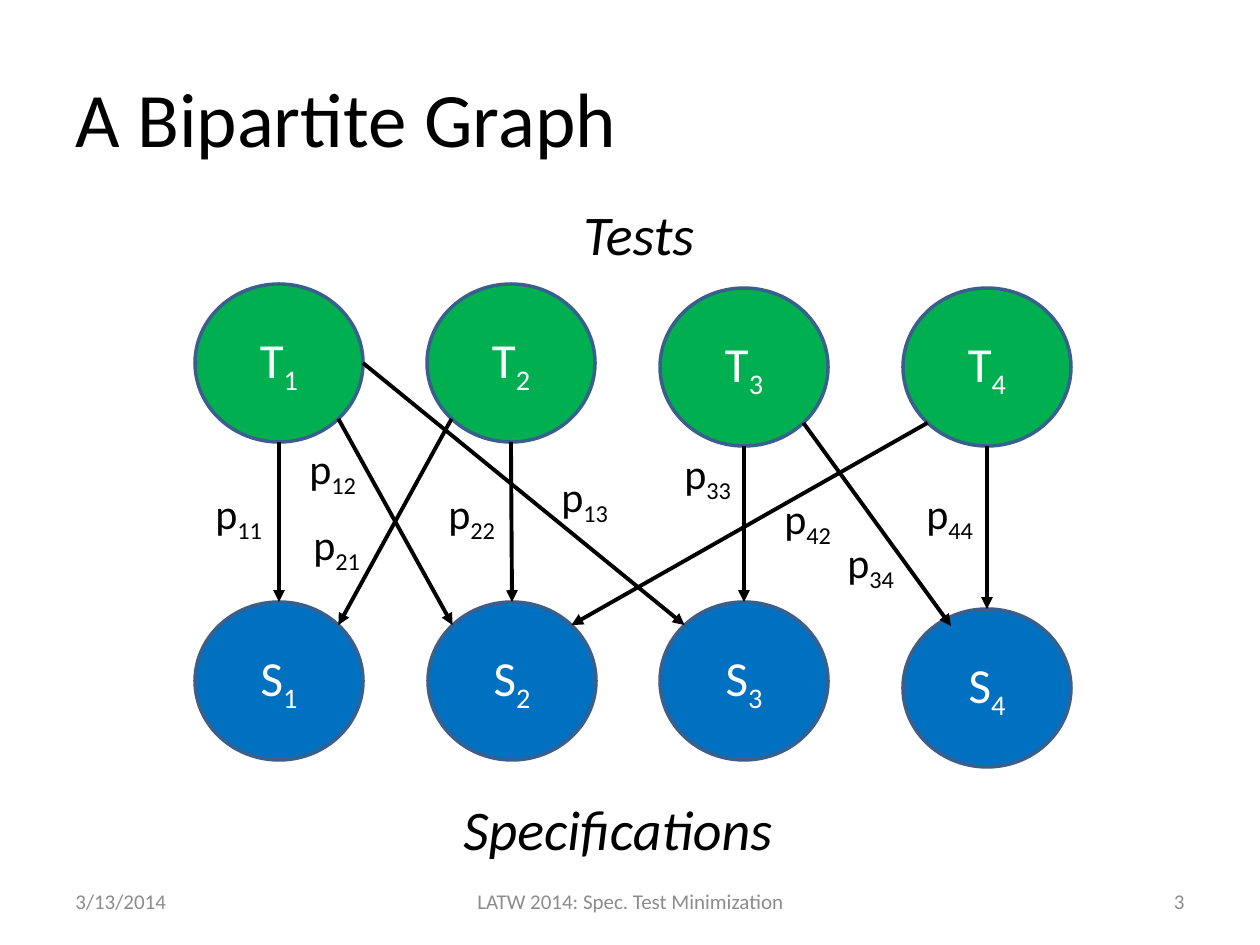
from math import sqrt

from lxml.etree import SubElement
from pptx import Presentation
from pptx.dml.color import RGBColor
from pptx.enum.shapes import MSO_CONNECTOR, MSO_SHAPE
from pptx.enum.text import MSO_ANCHOR as ANCHOR, PP_ALIGN as ALIGN
from pptx.oxml.ns import qn
from pptx.util import Pt

PX = 914400 // 126
FONT = "Calibri"
BLACK = RGBColor(0, 0, 0)
WHITE = RGBColor(255, 255, 255)
GRAY = RGBColor(0x8C, 0x8C, 0x8C)
GREEN = RGBColor(0x00, 0xB0, 0x50)
BLUE = RGBColor(0x00, 0x70, 0xC0)
OUTLINE = RGBColor(0x3A, 0x5F, 0x8C)

# text, box (left, top, width, height), size, colour, italic, alignment
TEXTS = [
    ("A Bipartite Graph", (63, 38, 1134, 157), 44, BLACK, False, ALIGN.LEFT),
    ("3/13/2014", (63, 876, 294, 50), 12, GRAY, False, ALIGN.LEFT),
    ("LATW 2014: Spec. Test Minimization", (431, 876, 399, 50), 12, GRAY, False, ALIGN.CENTER),
    ("3", (903, 876, 294, 50), 12, GRAY, False, ALIGN.RIGHT),
    ("Tests", (571, 193, 154, 80), 32, BLACK, True, ALIGN.LEFT),
    ("Specifications", (451, 788, 348, 80), 32, BLACK, True, ALIGN.LEFT),
]

NODE_W, NODE_H = 168, 158
# left and top of nodes 1 to 4 in each row
ROWS = {
    "T": (GREEN, [(195, 284), (427, 284), (660, 288), (903, 288)]),
    "S": (BLUE, [(195, 602), (428, 602), (660, 602), (903, 609)]),
}

# Connection sites of an ellipse, as offsets from its centre in radii
TOP, TOP_LEFT, BOTTOM_LEFT, BOTTOM, BOTTOM_RIGHT, RIGHT, TOP_RIGHT = 0, 1, 3, 4, 5, 6, 7
D = sqrt(0.5)
SITES = {
    TOP: (0, -1), TOP_LEFT: (-D, -D), BOTTOM_LEFT: (-D, D), BOTTOM: (0, 1),
    BOTTOM_RIGHT: (D, D), RIGHT: (1, 0), TOP_RIGHT: (D, -D),
}

# test, site, specification, site, left and top of the label
EDGES = [
    (1, BOTTOM, 1, TOP, (203, 481)),
    (2, BOTTOM, 2, TOP, (436, 481)),
    (3, BOTTOM, 3, TOP, (672, 441)),
    (4, BOTTOM, 4, TOP, (914, 481)),
    (1, BOTTOM_RIGHT, 2, TOP_LEFT, (297, 436)),
    (1, RIGHT, 3, TOP_LEFT, (549, 464)),
    (2, BOTTOM_LEFT, 1, TOP_RIGHT, (301, 512)),
    (3, BOTTOM_RIGHT, 4, None, (835, 530)),
    (4, BOTTOM_LEFT, 2, TOP_RIGHT, (772, 486)),
]
FREE_END = (951, 626)  # where an edge without an end site stops
LABEL_W, LABEL_H = 77, 63


def scaled(*lengths):
    return [round(n * PX) for n in lengths]


def add_run(p, text, size, color, italic=False, subscript=False):
    r = p.add_run()
    r.text = text
    r.font.name, r.font.size = FONT, Pt(size)
    r.font.color.rgb, r.font.italic = color, italic
    if subscript:
        r.font._element.set("baseline", "-25000")


def add_text(s, box, wrap=True, anchor=ANCHOR.TOP, align=ALIGN.LEFT):
    tf = s.shapes.add_textbox(*scaled(*box)).text_frame
    tf.word_wrap, tf.vertical_anchor = wrap, anchor
    tf.paragraphs[0].alignment = align
    return tf.paragraphs[0]


def add_node(s, letter, number, left, top, fill):
    sp = s.shapes.add_shape(MSO_SHAPE.OVAL, *scaled(left, top, NODE_W, NODE_H))
    sp.shadow.inherit = False
    sp.fill.solid()
    sp.fill.fore_color.rgb = fill
    sp.line.color.rgb, sp.line.width = OUTLINE, Pt(2)
    tf = sp.text_frame
    tf.vertical_anchor = ANCHOR.MIDDLE
    p = tf.paragraphs[0]
    p.alignment = ALIGN.CENTER
    add_run(p, letter, 28, WHITE)
    add_run(p, str(number), 28, WHITE, subscript=True)
    return sp


def site_point(node, site):
    dx, dy = SITES[site]
    return (round(node.left + node.width * (1 + dx) / 2),
            round(node.top + node.height * (1 + dy) / 2))


def add_edge(s, test, start, spec_node, end):
    """Draw an arrow and join it to the ellipse sites, which number up to 7."""
    to = scaled(*FREE_END) if end is None else site_point(spec_node, end)
    line = s.shapes.add_connector(MSO_CONNECTOR.STRAIGHT, *site_point(test, start), *to)
    line.line.color.rgb, line.line.width = BLACK, Pt(2.25)
    SubElement(line.line._get_or_add_ln(), qn("a:tailEnd"), type="triangle")
    SubElement(line._element.spPr, qn("a:effectLst"))
    joints = line._element.find(".//" + qn("p:cNvCxnSpPr"))
    for tag, node, site in (("a:stCxn", test, start), ("a:endCxn", spec_node, end)):
        if site is not None:
            SubElement(joints, qn(tag), id=str(node.shape_id), idx=str(site))


def main():
    prs = Presentation()
    prs.slide_width, prs.slide_height = scaled(1260, 945)
    s = prs.slides.add_slide(prs.slide_layouts[6])

    for text, box, size, color, italic, align in TEXTS:
        anchor = ANCHOR.TOP if italic else ANCHOR.MIDDLE
        add_run(add_text(s, box, anchor=anchor, align=align), text, size, color, italic)

    nodes = {}
    for letter, (fill, places) in ROWS.items():
        for number, (left, top) in enumerate(places, 1):
            nodes[letter, number] = add_node(s, letter, number, left, top, fill)

    for test, start, target, end, label in EDGES:
        add_edge(s, nodes["T", test], start, nodes["S", target], end)
        p = add_text(s, (*label, LABEL_W, LABEL_H), wrap=False)
        add_run(p, "p", 24, BLACK)
        add_run(p, f"{test}{target}", 24, BLACK, subscript=True)

    prs.save("out.pptx")


if __name__ == "__main__":
    main()
